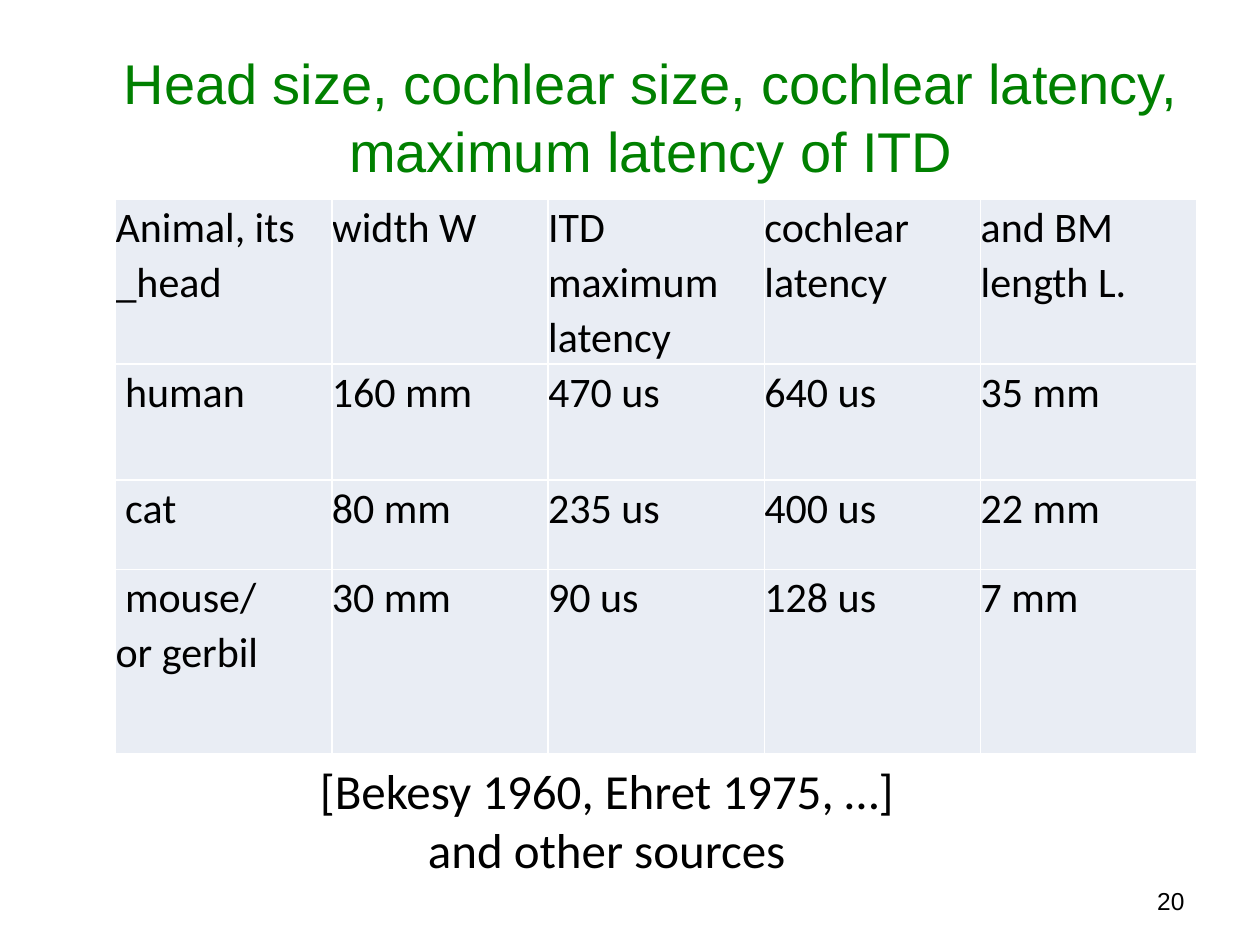
from lxml.etree import SubElement
from pptx import Presentation
from pptx.dml.color import RGBColor
from pptx.enum.text import MSO_ANCHOR, MSO_AUTO_SIZE, PP_ALIGN
from pptx.oxml.ns import qn
from pptx.util import Cm, Pt

COLORS = {"heading": "008000", "text": "000000", "cell": "E9EDF4", "border": "FFFFFF"}
ROW_HEIGHTS = [3.32, 2.34, 1.8, 3.71]
COLUMN_WIDTH = 4.36
ROWS = [
    ["Animal, its _head", "width W", "ITD maximum latency", "cochlear latency", "and BM length L."],
    [" human", "160 mm", "470 us", "640 us", "35 mm"],
    [" cat", "80 mm", "235 us", "400 us", "22 mm"],
    [" mouse/\nor gerbil", "30 mm", "90 us", "128 us", "7 mm"],
]


class SlideBuilder:
    """Holds the style and the slide being built."""

    def __init__(self, slide, colors):
        self.s = slide
        self.colors = colors

    def rgb(self, name):
        return RGBColor.from_string(self.colors[name])

    def run(self, p, text, size, font, color="text"):
        r = p.add_run()
        r.text = text
        r.font.size = Pt(size)
        r.font.name = font
        r.font.color.rgb = self.rgb(color)

    def fill_frame(self, sp, lines, size, font, align, color="text"):
        """Formats the frame and writes the lines as one paragraph."""
        tf = sp.text_frame
        tf.word_wrap = True
        tf.auto_size = MSO_AUTO_SIZE.NONE
        tf.vertical_anchor = MSO_ANCHOR.MIDDLE
        p = tf.paragraphs[0]
        p.alignment = align
        for i, line in enumerate(lines):
            if i:
                p.add_line_break()
            self.run(p, line, size, font, color)

    def title(self, text, left, top, width, height):
        sp = self.s.shapes.title
        sp.left, sp.top, sp.width, sp.height = Cm(left), Cm(top), Cm(width), Cm(height)
        self.fill_frame(sp, [text], 32, "Arial", PP_ALIGN.CENTER, "heading")

    def text(self, lines, left, top, width, height, size, font, align):
        sp = self.s.shapes.add_textbox(Cm(left), Cm(top), Cm(width), Cm(height))
        self.fill_frame(sp, lines, size, font, align)

    def borders(self, cell):
        tcPr = cell._tc.get_or_add_tcPr()
        for side in ("lnL", "lnR", "lnT", "lnB"):
            ln = SubElement(tcPr, qn(f"a:{side}"), w=str(Pt(1)))
            fill = SubElement(ln, qn("a:solidFill"))
            SubElement(fill, qn("a:srgbClr"), val=self.colors["border"])

    def cell(self, cell, text):
        cell.margin_left = cell.margin_right = cell.margin_top = cell.margin_bottom = 0
        self.borders(cell)
        cell.fill.solid()
        cell.fill.fore_color.rgb = self.rgb("cell")
        tf = cell.text_frame
        for i, line in enumerate(text.split("\n")):
            p = tf.add_paragraph() if i else tf.paragraphs[0]
            p.line_spacing = 1.07
            self.run(p, line, 24, "Calibri")

    def table(self, rows, left, top, column_width, row_heights):
        columns = len(rows[0])
        table = self.s.shapes.add_table(
            len(rows), columns, Cm(left), Cm(top),
            Cm(column_width * columns), Cm(sum(row_heights))).table
        table.first_row = table.horz_banding = False
        for column in table.columns:
            column.width = Cm(column_width)
        for i, (row, height) in enumerate(zip(rows, row_heights)):
            table.rows[i].height = Cm(height)
            for j, text in enumerate(row):
                self.cell(table.cell(i, j), text)


def main():
    prs = Presentation()
    prs.slide_width, prs.slide_height = Cm(25.4), Cm(19.05)
    b = SlideBuilder(prs.slides.add_slide(prs.slide_layouts[5]), COLORS)
    b.title("Head size, cochlear size, cochlear latency, maximum latency of ITD",
            1.7, 1.07, 22.86, 2.54)
    b.table(ROWS, 2.33, 4.02, COLUMN_WIDTH, ROW_HEIGHTS)
    b.text(["[Bekesy 1960, Ehret 1975, …]", "and other sources"],
           0, 15.04, 24.46, 2.97, 28, "Calibri", PP_ALIGN.CENTER)
    b.text(["20"], 18.2, 17.66, 5.93, 1.01, 14, "Arial", PP_ALIGN.RIGHT)
    prs.save("out.pptx")


if __name__ == "__main__":
    main()
